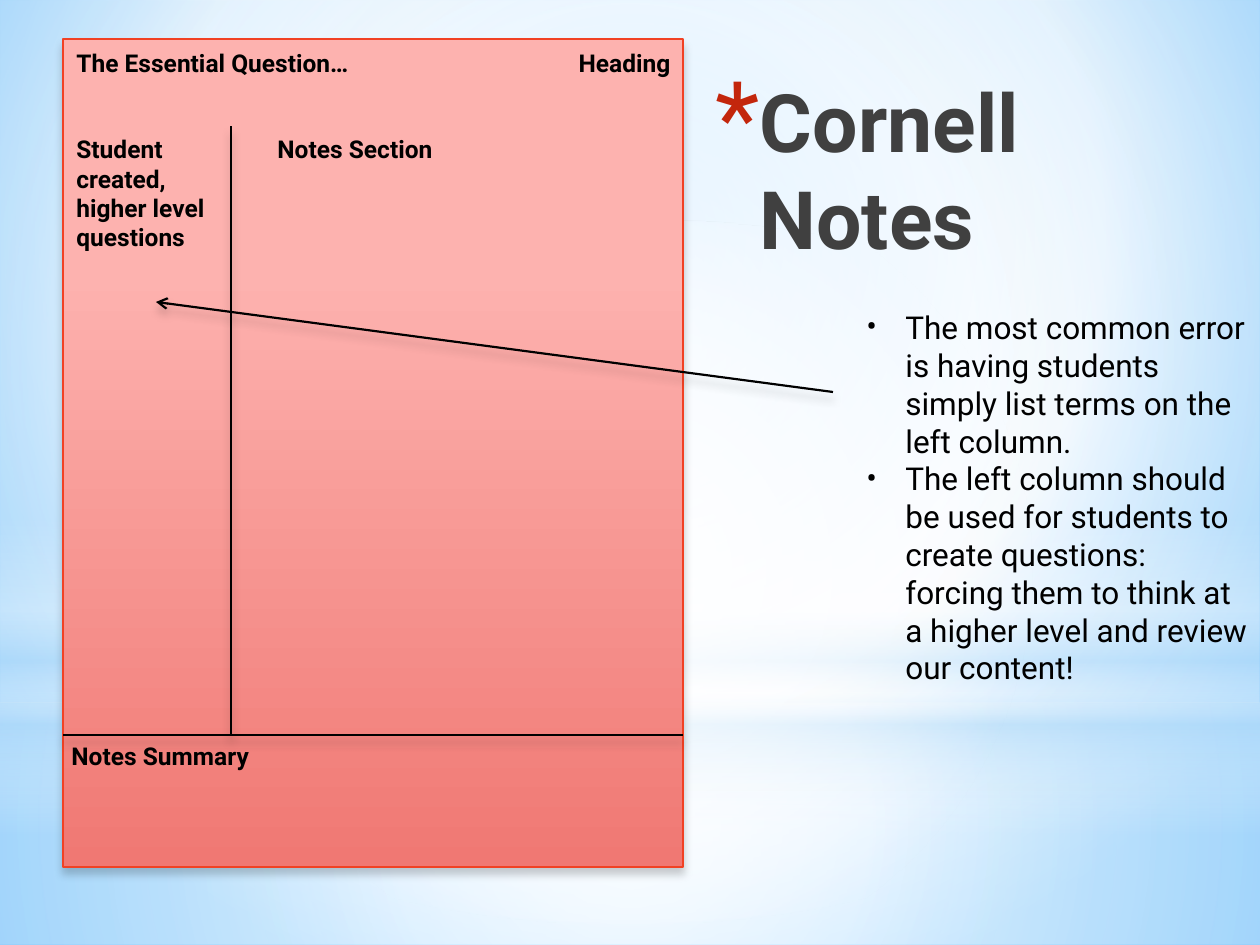
from lxml import etree
from pptx import Presentation
from pptx import util as u
from pptx.dml.color import RGBColor
from pptx.enum import shapes, text
from pptx.oxml import parse_xml
from pptx.oxml.ns import nsdecls, qn

HEX = {"ink": "000000", "title": "404040", "star": "C3260C", "edge": "F14124",
       "white": "FFFFFF", "mist": "B4DCFA", "sky": "9ED5FF", "blue": "5BB9FF",
       "pink": "FDB2AF", "rose": "F07873"}
FONT = "Roboto"
MID = (50, 50, 50, 50)

BACK = ([(0, "sky", 100), (60, "white", 100), (100, "blue", 100)], (20, 10, 20, 60))
GLOWS = [
    ("RECTANGLE", (0, 703, 1260, 242),
     [(0, "white", 91), (37, "white", 76), (100, "mist", 79)], MID),
    ("RECTANGLE", (0, 0, 1260, 703),
     [(0, "white", 89), (48, "white", 62), (100, "mist", 79)], MID),
    ("RECTANGLE", (0, 519, 1260, 315),
     [(0, "white", 0), (29, "white", 30), (45, "mist", 40), (55, "white", 26),
      (65, "mist", 60), (100, "white", 0)], None),
    ("OVAL", (0, 220, 1260, 703), [(0, "white", 100), (56, "white", 0)], MID),
]
TITLE = ("Cornell Notes", (703, 59, 557, 220))
SHEET = ((63, 39, 620, 828), [(28, "pink", 100), (100, "rose", 100)])
RULES = [(231, 126, 231, 735), (63, 735, 683, 735)]
ARROW = (833, 392, 156, 302)
LABELS = [
    ("Heading", (494, 42, 189, 43), "RIGHT"),
    ("The Essential Question…", (64, 42, 408, 42), "LEFT"),
    ("Notes Section", (265, 128, 408, 42), "LEFT"),
    ("Student created, higher level questions", (64, 128, 168, 131), "LEFT"),
    ("Notes Summary", (59, 735, 234, 43), "LEFT"),
]
POINTS = [
    "The most common error is having students simply list terms on the left column.",
    "The left column should be used for students to create questions: "
    "forcing them to think at a higher level and review our content!",
]
POINT_BOX = (854, 302, 406, 394)


def px(n):
    return round(n * 914400 / 126)


def emu(box):
    return [px(n) for n in box]


def rgb(name):
    return RGBColor.from_string(HEX[name])


def blend(fill, host, stops, focus=None):
    fill.solid()
    marks = "".join(
        f'<a:gs pos="{pos * 1000}"><a:srgbClr val="{HEX[hue]}">'
        f'<a:alpha val="{alpha * 1000}"/></a:srgbClr></a:gs>'
        for pos, hue, alpha in stops)
    if focus:
        sides = " ".join(f'{s}="{n * 1000}"' for s, n in zip("ltrb", focus))
        way = f'<a:path path="circle"><a:fillToRect {sides}/></a:path>'
    else:
        way = '<a:lin ang="5400000" scaled="0"/>'
    old = next(host.iter(qn("a:solidFill")))
    old.getparent().replace(old, parse_xml(
        f'<a:gradFill {nsdecls("a")} rotWithShape="1"><a:gsLst>{marks}</a:gsLst>{way}</a:gradFill>'))


def shade(props):
    for old in props.findall(qn("a:effectLst")):
        props.remove(old)
    props.append(parse_xml(
        f'<a:effectLst {nsdecls("a")}><a:outerShdw blurRad="{u.Pt(5)}" dist="{u.Pt(4)}" '
        'dir="5400000" rotWithShape="0"><a:srgbClr val="000000"><a:alpha val="20000"/>'
        '</a:srgbClr></a:outerShdw></a:effectLst>'))


def block(slide, kind, box, stops, focus=None):
    shape = slide.shapes.add_shape(getattr(shapes.MSO_SHAPE, kind), *emu(box))
    shape.shadow.inherit = False
    blend(shape.fill, shape.element.spPr, stops, focus)
    shape.line.fill.background()
    return shape


def rule(slide, ends):
    line = slide.shapes.add_connector(shapes.MSO_CONNECTOR.STRAIGHT, *emu(ends))
    line.line.color.rgb = rgb("ink")
    line.line.width = u.Pt(1.25)
    shade(line.element.spPr)
    return line


def style(par, size, hue="ink", bold=False, side="LEFT"):
    par.alignment = getattr(text.PP_ALIGN, side)
    look = {"name": FONT, "size": u.Pt(size), "bold": bold}
    for run in par.runs:
        for key, value in look.items():
            setattr(run.font, key, value)
        run.font.color.rgb = rgb(hue)


def bullet(par, mark, gap, extra=""):
    props = par._p.get_or_add_pPr()
    props.set("marL", str(px(gap)))
    props.set("indent", str(-px(gap)))
    for item in parse_xml(f'<a:pPr {nsdecls("a")}>{extra}<a:buFont typeface="{FONT}"/>'
                          f'<a:buChar char="{mark}"/></a:pPr>'):
        props.append(item)


def write(slide, lines, box):
    frame = slide.shapes.add_textbox(*emu(box)).text_frame
    frame.word_wrap = True
    frame.auto_size = text.MSO_AUTO_SIZE.SHAPE_TO_FIT_TEXT
    frame.text = "\n".join(lines)
    return frame.paragraphs


def main():
    deck = Presentation()
    deck.slide_width, deck.slide_height = px(1260), px(945)
    slide = deck.slides.add_slide(deck.slide_layouts[5])
    blend(slide.background.fill, slide.element, *BACK)
    for glow in GLOWS:
        block(slide, *glow)

    title = slide.shapes.title
    slide.shapes.element.append(title.element)
    words, box = TITLE
    title.left, title.top, title.width, title.height = emu(box)
    frame = title.text_frame
    frame.text = words
    frame.word_wrap = True
    frame.auto_size = text.MSO_AUTO_SIZE.NONE
    frame.vertical_anchor = text.MSO_ANCHOR.MIDDLE
    head = frame.paragraphs[0]
    style(head, 46, "title", True)
    bullet(head, "*", 44, f'<a:buClr><a:srgbClr val="{HEX["star"]}"/></a:buClr>'
                          '<a:buSzPct val="128000"/>')

    box, stops = SHEET
    sheet = block(slide, "RECTANGLE", box, stops)
    sheet.line.color.rgb = rgb("edge")
    sheet.line.width = u.Pt(0.75)
    shade(sheet.element.spPr)
    for ends in RULES:
        rule(slide, ends)
    for words, box, side in LABELS:
        for par in write(slide, [words], box):
            style(par, 14, bold=True, side=side)
    arrow = rule(slide, ARROW)
    etree.SubElement(arrow.line._get_or_add_ln(), qn("a:tailEnd"), type="arrow")
    for par in write(slide, POINTS, POINT_BOX):
        style(par, 18)
        bullet(par, "•", 39)
    deck.save("out.pptx")


if __name__ == "__main__":
    main()
